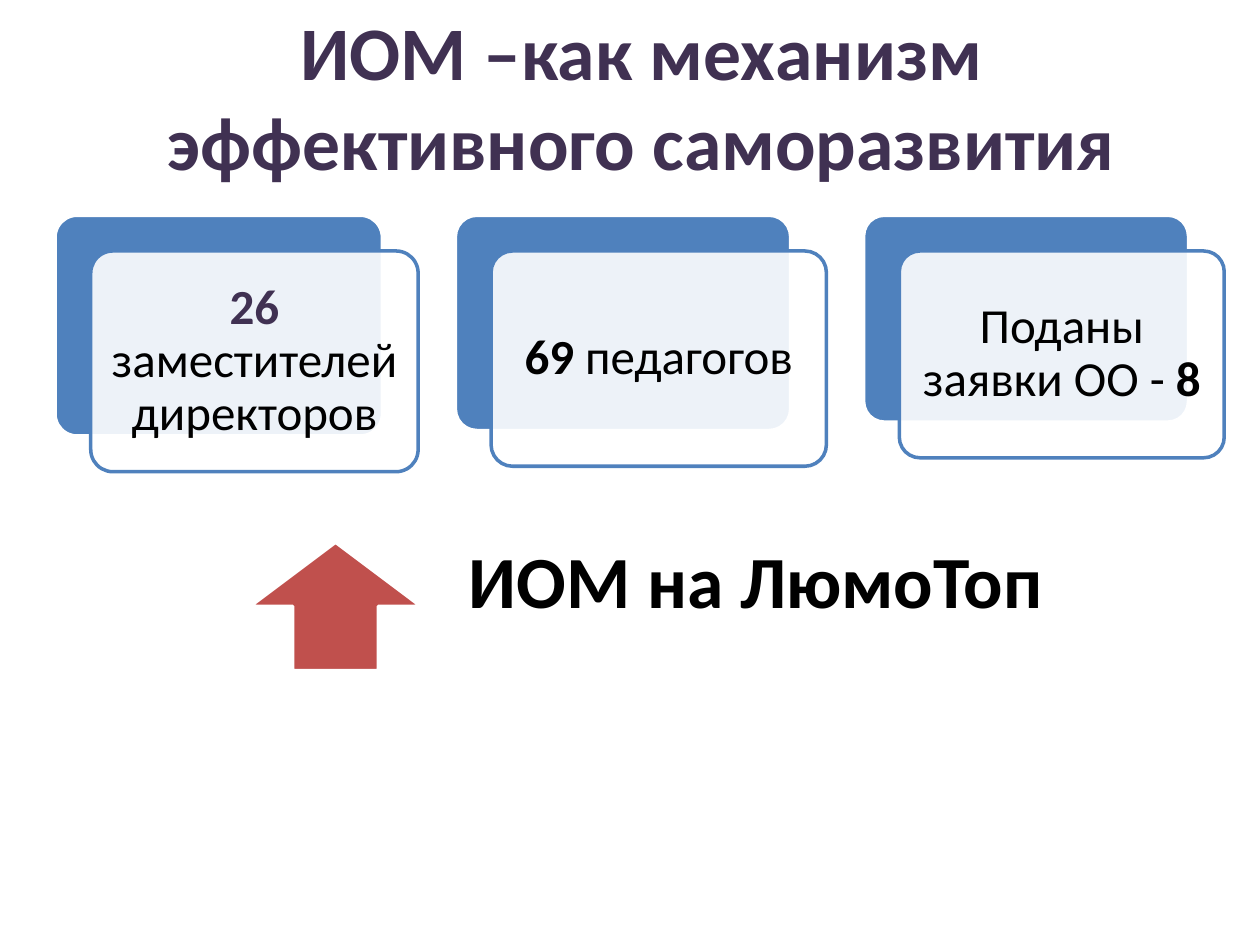
from pptx import Presentation
from pptx.dml.color import RGBColor
from pptx.enum.shapes import MSO_SHAPE as SHAPE
from pptx.enum.text import MSO_ANCHOR as ANCHOR, PP_ALIGN as ALIGN
from pptx.oxml.ns import qn
from pptx.util import Cm, Pt
from lxml import etree


def rgb(value):
    return RGBColor.from_string(value)


def write(s, runs, size, align, insets):
    tf = s.text_frame
    tf.word_wrap = True
    tf.vertical_anchor = ANCHOR.MIDDLE
    tf.margin_left, tf.margin_top, tf.margin_right, tf.margin_bottom = map(Cm, insets)
    p = tf.paragraphs[0]
    p.alignment = align
    p.font.name = "Calibri"
    p.font.size = Pt(size)
    for text, color, bold in runs:
        r = p.add_run()
        r.text = text
        r.font.bold = bold
        r.font.color.rgb = rgb(color)
    return p


prs = Presentation()
prs.slide_width, prs.slide_height = Cm(25.4), Cm(19.05)
slide = prs.slides.add_slide(prs.slide_layouts[6])
shapes = slide.shapes

title = shapes.add_textbox(Cm(1.5), Cm(0.33), Cm(22.86), Cm(3.18))
write(title, [("ИОМ –как механизм эффективного саморазвития", "403152", True)],
      43.2, ALIGN.CENTER, (0.25, 0.13, 0.25, 0.13))

cards = [
    (1.11, 6.6, 4.45, [("26 ", "403152", True), ("заместителей директоров", "000000", False)]),
    (9.18, 6.76, 4.34, [("69", "000000", True), (" педагогов", "000000", False)]),
    (17.41, 6.55, 4.17, [("Поданы заявки ОО - ", "000000", False), ("8", "000000", True)]),
]
for left, width, height, runs in cards:
    for shift, fill, line in ((0, "4F81BD", "FFFFFF"), (0.72, "FFFFFF", "4F81BD")):
        s = shapes.add_shape(SHAPE.ROUNDED_RECTANGLE, Cm(left + shift), Cm(4.34 + shift),
                             Cm(width), Cm(height))
        s.adjustments[0] = 0.1
        s.shadow.inherit = False
        s.fill.solid()
        s.fill.fore_color.rgb = rgb(fill)
        s.line.color.rgb = rgb(line)
        s.line.width = Pt(2)
    color = s.fill._xPr.find(qn("a:solidFill"))[0]
    etree.SubElement(color, qn("a:alpha"), val="90000")
    p = write(s, runs, 28, ALIGN.CENTER, (0.28, 0.28, 0.28, 0.28))
    p.line_spacing = 0.9

arrow = shapes.add_shape(SHAPE.UP_ARROW, Cm(5.04), Cm(10.93), Cm(3.45), Cm(2.59))
arrow.shadow.inherit = False
arrow.fill.solid()
arrow.fill.fore_color.rgb = rgb("C0504D")
arrow.line.color.rgb = rgb("FFFFFF")
arrow.line.width = Pt(2)

caption = shapes.add_textbox(Cm(8.61), Cm(10.92), Cm(12.55), Cm(2.59))
p = write(caption, [("ИОМ на ЛюмоТоп", "000000", True)], 42, ALIGN.LEFT, (0.84, 0, 0, 0.84))
p.line_spacing = 0.9

prs.save("out.pptx")
